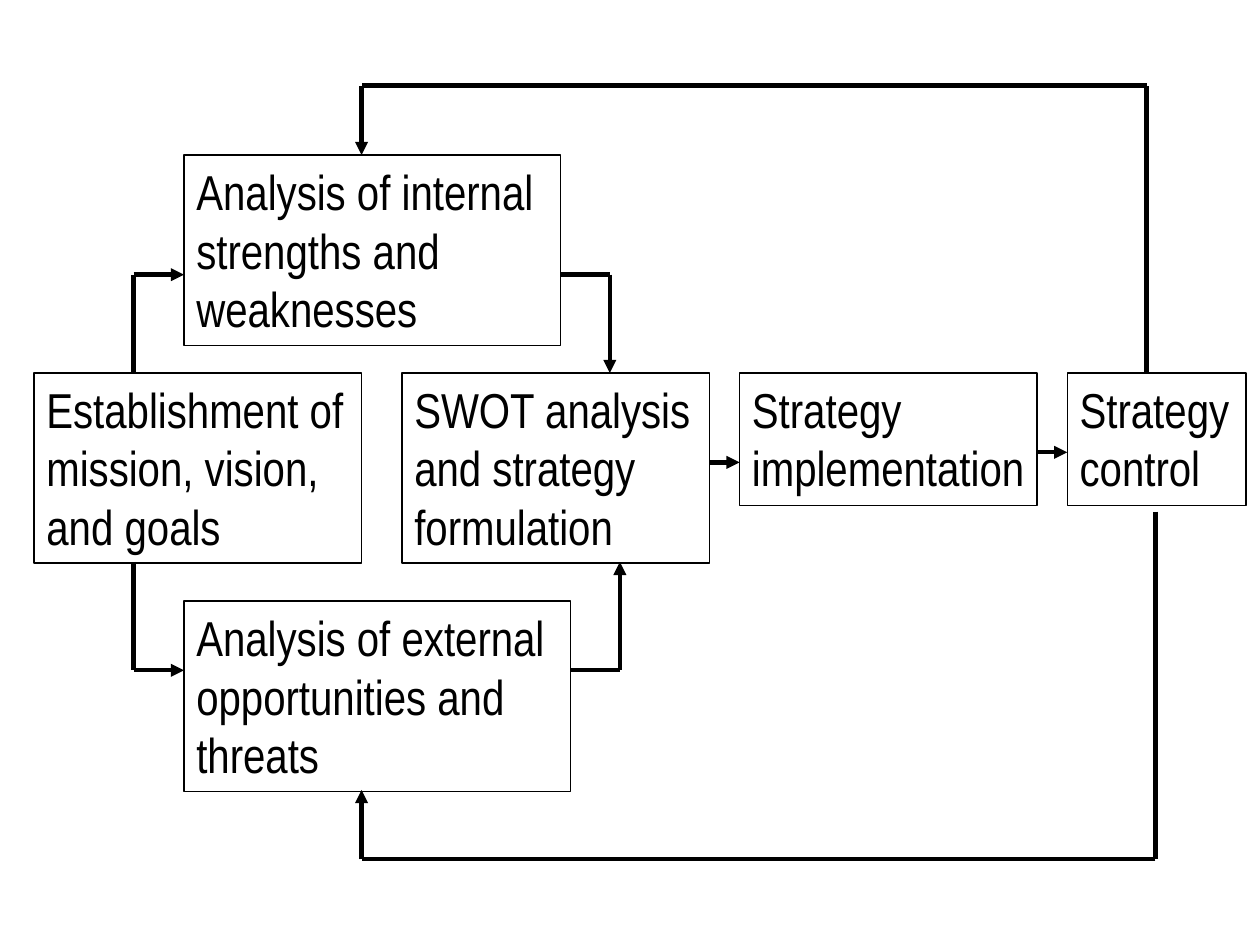
from collections import namedtuple
from itertools import pairwise

from pptx import Presentation
from pptx.dml.color import RGBColor as RGB
from pptx.enum.shapes import MSO_CONNECTOR as CONN
from pptx.enum.text import MSO_ANCHOR as ANCHOR, MSO_AUTO_SIZE as AUTO, PP_ALIGN as ALIGN
from pptx.oxml.ns import qn
from pptx.util import Pt
from lxml.etree import SubElement

PX = 9144
COLORS = {"ink": "000000", "paper": "FFFFFF"}
FONT = "Arial Narrow"

Box = namedtuple("Box", "x y w h")
MISSION = Box(27, 296, 260, 151)
INTERNAL = Box(146, 123, 299, 151)
EXTERNAL = Box(146, 477, 307, 151)
SWOT = Box(319, 296, 244, 151)
IMPLEMENT = Box(587, 296, 236, 105)
CONTROL = Box(847, 296, 142, 105)

STEPS = [
    (MISSION, "Establishment of mission, vision, and goals"),
    (EXTERNAL, "Analysis of external opportunities and threats"),
    (INTERNAL, "Analysis of internal strengths and weaknesses"),
    (SWOT, "SWOT analysis and strategy formulation"),
    (IMPLEMENT, "Strategy implementation"),
    (CONTROL, "Strategy control"),
]


def color(name):
    return RGB.from_string(COLORS[name])


def add_text(s, box, text, size=28, ink="ink", align=ALIGN.LEFT):
    sp = s.shapes.add_textbox(*(v * PX for v in box))
    sp.line.color.rgb = color(ink)
    sp.line.width = Pt(0.75)
    tf = sp.text_frame
    tf.word_wrap = True
    tf.auto_size = AUTO.SHAPE_TO_FIT_TEXT
    tf.vertical_anchor = ANCHOR.TOP
    p = tf.paragraphs[0]
    p.alignment = align
    r = p.add_run()
    r.text = text
    r.font.name = FONT
    r.font.size = Pt(size)
    r.font.color.rgb = color(ink)
    return sp


def add_route(s, *points):
    for start, end in pairwise(points):
        line = s.shapes.add_connector(CONN.STRAIGHT, *(v * PX for v in start + end))
        line.line.color.rgb = color("ink")
        line.line.width = Pt(2.5)
        SubElement(line._element.spPr, qn("a:effectLst"))
    SubElement(line.line._get_or_add_ln(), qn("a:tailEnd"), type="triangle")


def add_mission_routes(s, box):
    x = box.x + 79
    for start, analysis, turn in ((box.y, INTERNAL, 218), (box.y + box.h - 1, EXTERNAL, 532)):
        add_route(s, (x, start), (x, turn), (analysis.x, turn))


def add_swot_routes(s, box):
    for end, analysis, turn in ((box.y, INTERNAL, 218), (box.y + box.h - 1, EXTERNAL, 532)):
        right = analysis.x + analysis.w
        add_route(s, (right, turn), (right + 39, turn), (right + 39, end))


def add_step_route(s, left, right, drop):
    y = left.y + drop
    add_route(s, (left.x + left.w, y), (right.x, y))


def add_feedback_routes(s, box):
    target = INTERNAL.x + 141
    top, bottom = 68, 682
    up, down = box.x + 63, box.x + 70
    add_route(s, (up, box.y), (up, top), (target, top), (target, INTERNAL.y))
    add_route(s, (down, box.y + box.h + 5), (down, bottom), (target, bottom),
              (target, EXTERNAL.y + EXTERNAL.h - 1))


def main():
    prs = Presentation()
    prs.slide_width, prs.slide_height = 1000 * PX, 750 * PX
    s = prs.slides.add_slide(prs.slide_layouts[6])
    s.background.fill.solid()
    s.background.fill.fore_color.rgb = color("paper")
    for box, text in STEPS:
        add_text(s, box, text)
    add_mission_routes(s, MISSION)
    add_swot_routes(s, SWOT)
    add_step_route(s, SWOT, IMPLEMENT, 71)
    add_step_route(s, IMPLEMENT, CONTROL, 63)
    add_feedback_routes(s, CONTROL)
    prs.save("out.pptx")


if __name__ == "__main__":
    main()
